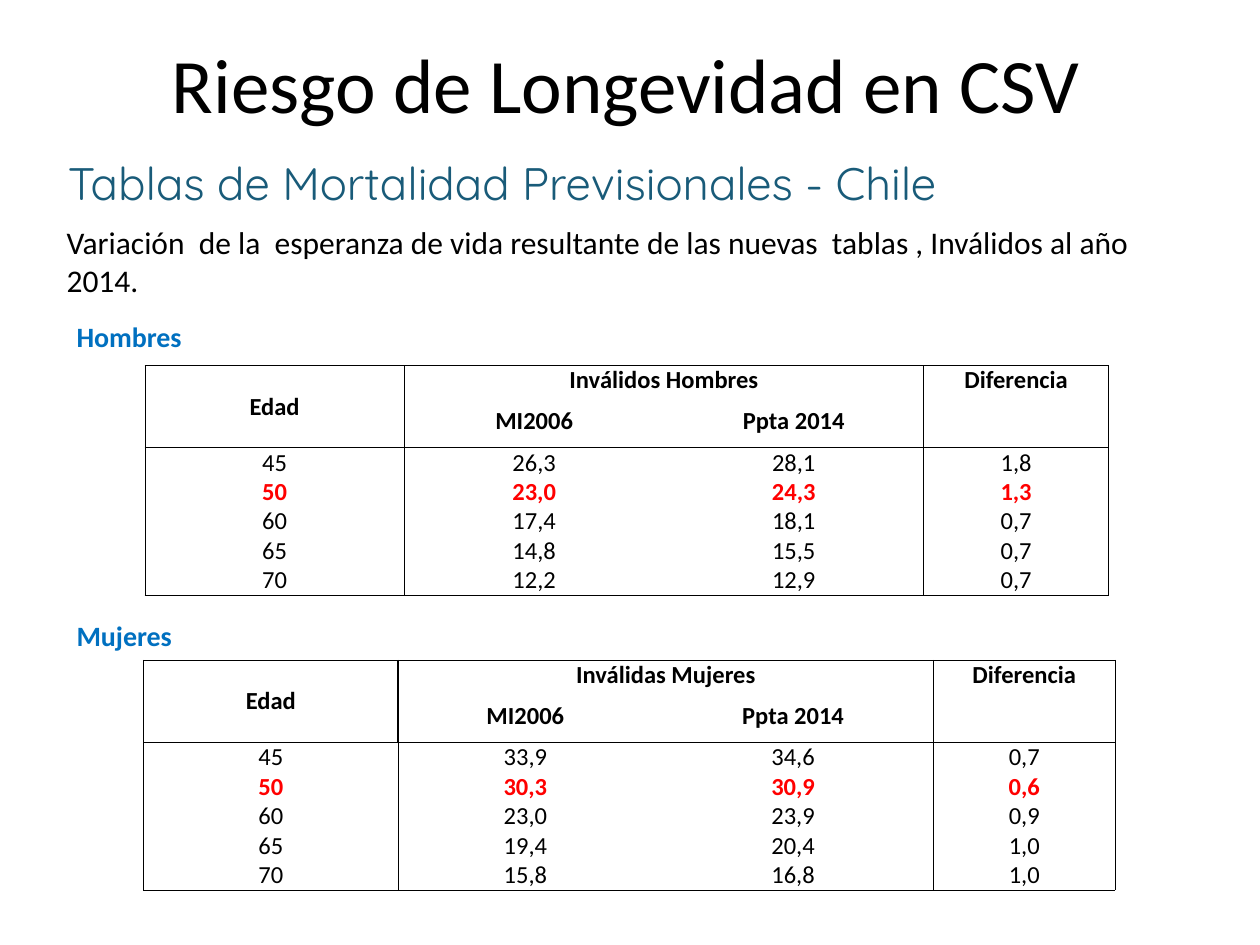
from lxml import etree
from pptx import Presentation
from pptx.dml.color import RGBColor
from pptx.enum import text
from pptx.oxml import ns
from pptx.util import Inches, Pt

BLACK, RED, BLUE, TEAL = "000000", "FF0000", "0070C0", "195B79"
CENTER = text.PP_ALIGN.CENTER
MIDDLE, BOTTOM = text.MSO_ANCHOR.MIDDLE, text.MSO_ANCHOR.BOTTOM
AGES = ["45", "50", "60", "65", "70"]
HIGHLIGHTED_AGE = "50"
HEADER_ROWS = 2


def color(value):
    return RGBColor.from_string(value)


def write(frame, content, size=14, font="Calibri", ink=BLACK, bold=False, align=None):
    paragraph = frame.paragraphs[0]
    paragraph.alignment = align
    run = paragraph.add_run()
    run.text = content
    run.font.size, run.font.name, run.font.bold = Pt(size), font, bold
    run.font.color.rgb = color(ink)


def add_text(slide, box, content, anchor=None, **style):
    frame = slide.shapes.add_textbox(*map(Inches, box)).text_frame
    frame.word_wrap = True
    frame.vertical_anchor = anchor
    write(frame, content, **style)


def set_borders(cell, widths):
    """Draw the left, right, top and bottom edges; a width of 0 hides one."""
    properties = cell._tc.get_or_add_tcPr()
    for side, width in zip("LRTB", widths):
        line = etree.SubElement(properties, ns.qn(f"a:ln{side}"), w=str(int(Pt(width))))
        if width:
            fill = etree.SubElement(line, ns.qn("a:solidFill"))
            etree.SubElement(fill, ns.qn("a:srgbClr"), val=BLACK)
        else:
            etree.SubElement(line, ns.qn("a:noFill"))


def format_cells(table, thick_rows):
    """Rule the frame, the header and the outer columns, without fills."""
    last_row, last_column = len(table.rows) - 1, len(table.columns) - 1
    for row in range(last_row + 1):
        edad_rule = 1 if row in thick_rows else 0.5
        rules = [0.5, edad_rule, 0, 0.5, 0.5]
        top = 0.5 if row in (0, HEADER_ROWS) else 0
        bottom = 0.5 if row in (HEADER_ROWS - 1, last_row) else 0
        for column in range(last_column + 1):
            cell = table.cell(row, column)
            set_borders(cell, (rules[column], rules[column + 1], top, bottom))
            cell.fill.background()
            cell.margin_left = cell.margin_right = 0
            cell.margin_top = cell.margin_bottom = 0
            cell.vertical_anchor = BOTTOM


def add_mortality_table(slide, box, group, widths, columns, thick_rows):
    frame = slide.shapes.add_table(HEADER_ROWS + len(AGES), 4, *map(Inches, box))
    table = frame.table
    table.first_row = table.horz_banding = False
    for column, width in zip(table.columns, widths):
        column.width = Inches(width)
    for index, row in enumerate(table.rows):
        row.height = Inches(0.42 if index == 1 else 0.23)
    format_cells(table, thick_rows)

    # Header
    table.cell(0, 0).merge(table.cell(1, 0))
    table.cell(0, 1).merge(table.cell(0, 2))
    headers = [(0, 0, "Edad", MIDDLE), (0, 1, group, BOTTOM), (0, 3, "Diferencia", BOTTOM),
               (1, 1, "MI2006", MIDDLE), (1, 2, "Ppta 2014", MIDDLE)]
    for row, column, label, anchor in headers:
        cell = table.cell(row, column)
        cell.vertical_anchor = anchor
        write(cell.text_frame, label, bold=True, align=CENTER)

    # Values by age
    for row, values in enumerate(zip(AGES, *columns), HEADER_ROWS):
        marked = values[0] == HIGHLIGHTED_AGE
        for column, value in enumerate(values):
            write(table.cell(row, column).text_frame, value, bold=marked,
                  ink=RED if marked else BLACK, align=CENTER)


def add_headings(slide):
    add_text(slide, (0.47, 0.15, 9, 1.01), "Riesgo de Longevidad en CSV",
             anchor=MIDDLE, size=44, align=CENTER)
    add_text(slide, (0.44, 1.18, 8.74, 0.54), "Tablas de Mortalidad Previsionales - Chile",
             size=26, font="Quicksand", ink=TEAL)
    add_text(slide, (0.43, 1.72, 9.21, 0.71),
             "Variación  de la  esperanza de vida resultante de las nuevas  tablas , "
             "Inválidos al año 2014.", size=18)


def add_section(slide, label, label_top, **table):
    add_text(slide, (0.51, label_top, 6.54, 0.37), label, size=16, ink=BLUE, bold=True)
    add_mortality_table(slide, **table)


def main():
    presentation = Presentation()
    presentation.slide_width, presentation.slide_height = Inches(10), Inches(7.5)
    slide = presentation.slides.add_slide(presentation.slide_layouts[6])
    add_headings(slide)
    add_section(
        slide, "Hombres", 2.49, box=(1.15, 2.9, 7.64, 1.82), group="Inválidos Hombres",
        widths=(2.06, 2.06, 2.06, 1.47), thick_rows=(1,),
        columns=[["26,3", "23,0", "17,4", "14,8", "12,2"],
                 ["28,1", "24,3", "18,1", "15,5", "12,9"],
                 ["1,8", "1,3", "0,7", "0,7", "0,7"]])
    add_section(
        slide, "Mujeres", 4.86, box=(1.14, 5.24, 7.72, 1.82), group="Inválidas Mujeres",
        widths=(2.02, 2.02, 2.23, 1.44), thick_rows=(0, 1),
        columns=[["33,9", "30,3", "23,0", "19,4", "15,8"],
                 ["34,6", "30,9", "23,9", "20,4", "16,8"],
                 ["0,7", "0,6", "0,9", "1,0", "1,0"]])
    presentation.save("out.pptx")


if __name__ == "__main__":
    main()
